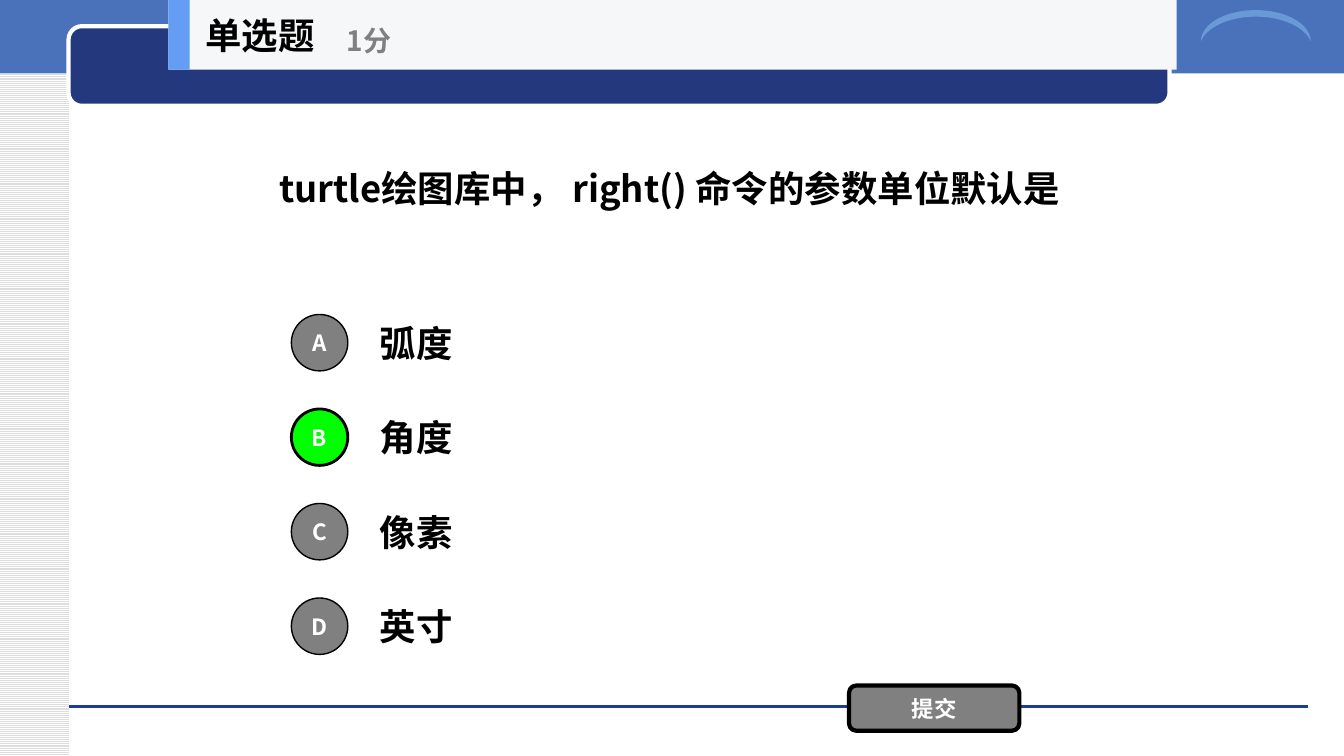
from lxml import etree
from pptx import Presentation
from pptx.dml.color import RGBColor
from pptx.enum import dml, shapes, text
from pptx.oxml.ns import qn
from pptx.util import Inches, Pt

FONT = "Noto Sans CJK SC"
SHAPE = shapes.MSO_SHAPE


def color(hex_value):
    return RGBColor.from_string(hex_value)


def add_block(kind, box, fill=None, line=None, line_width=1, label="",
              size=26, ink="000000", centred=False, wrap=True):
    """Add a preset shape, or a text box when kind is None, with bold text."""
    box = [Inches(length) for length in box]
    if kind is None:
        block = slide.shapes.add_textbox(*box)
    else:
        block = slide.shapes.add_shape(kind, *box)
        block.shadow.inherit = False
        if fill:
            block.fill.solid()
            block.fill.fore_color.rgb = color(fill)
        if line:
            block.line.color.rgb = color(line)
            block.line.width = Pt(line_width)
        else:
            block.line.fill.background()
    if label:
        frame = block.text_frame
        frame.word_wrap = wrap
        frame.vertical_anchor = text.MSO_ANCHOR.MIDDLE
        if centred:
            frame.margin_left = frame.margin_right = 0
        paragraph = frame.paragraphs[0]
        paragraph.alignment = text.PP_ALIGN.CENTER if centred else text.PP_ALIGN.LEFT
        run = paragraph.add_run()
        run.text = label
        run.font.size = Pt(size)
        run.font.bold = True
        run.font.name = FONT
        run.font.color.rgb = color(ink)
        etree.SubElement(run.font._element, qn("a:ea")).set("typeface", FONT)
    return block


deck = Presentation()
deck.slide_width, deck.slide_height = Inches(13.33), Inches(7.5)
slide = deck.slides.add_slide(deck.slide_layouts[6])

# Backdrop
side_stripes = add_block(SHAPE.RECTANGLE, (0, 0, 0.68, 7.5))
side_stripes.fill.patterned()
side_stripes.fill.pattern = dml.MSO_PATTERN.LIGHT_HORIZONTAL
side_stripes.fill.fore_color.rgb = color("DDDDDD")
side_stripes.fill.back_color.rgb = color("FFFFFF")

add_block(SHAPE.RECTANGLE, (0, -0.03, 13.33, 0.76), "4972BB")

footer_rule = slide.shapes.add_connector(
    shapes.MSO_CONNECTOR.STRAIGHT,
    Inches(0.68), Inches(7.01), Inches(12.97), Inches(7.01))
footer_rule.line.color.rgb = color("1A3D97")
footer_rule.line.width = Pt(0)
etree.SubElement(footer_rule._element.spPr, qn("a:effectLst"))

add_block(SHAPE.ROUNDED_RECTANGLE, (0.68, 0.26, 10.92, 0.79), "23387D", "FFFFFF", 3)

crescent = add_block(SHAPE.MOON, (12.3, -0.29, 0.31, 1.09), "6A99D8")
crescent.rotation = 90
crescent.adjustments[0] = 0.21

# Question and answers
add_block(None, (2.67, 0.69, 8, 2.34), label="turtle绘图库中， right() 命令的参数单位默认是")

answers = {"A": "弧度", "B": "角度", "C": "像素", "D": "英寸"}
correct = "B"
for row, (letter, answer) in enumerate(answers.items()):
    top = 3.05 + row * 0.9375
    add_block(None, (3.67, top, 7, 0.7), label=answer)
    chosen = letter == correct
    add_block(SHAPE.OVAL, (2.89, top + 0.07, 0.56, 0.56),
              "00FF00" if chosen else "808080", "000000", 2 if chosen else 1,
              letter, 16, "FFFFFF", centred=True)

add_block(SHAPE.ROUNDED_RECTANGLE, (8.42, 6.8, 1.69, 0.45), "808080", "000000", 3,
          "提交", 16, "FFFFFF", centred=True)

# Question type bar
add_block(SHAPE.RECTANGLE, (1.67, 0, 10, 0.69), "F6F7F8")
add_block(SHAPE.RECTANGLE, (1.67, 0, 0.21, 0.69), "639EF4")
add_block(None, (1.94, 0, 2.08, 0.69), label="单选题", wrap=False)
add_block(None, (3.34, 0.12, 2.5, 0.56), label="1分", size=20, ink="808080", wrap=False)

deck.save("out.pptx")
